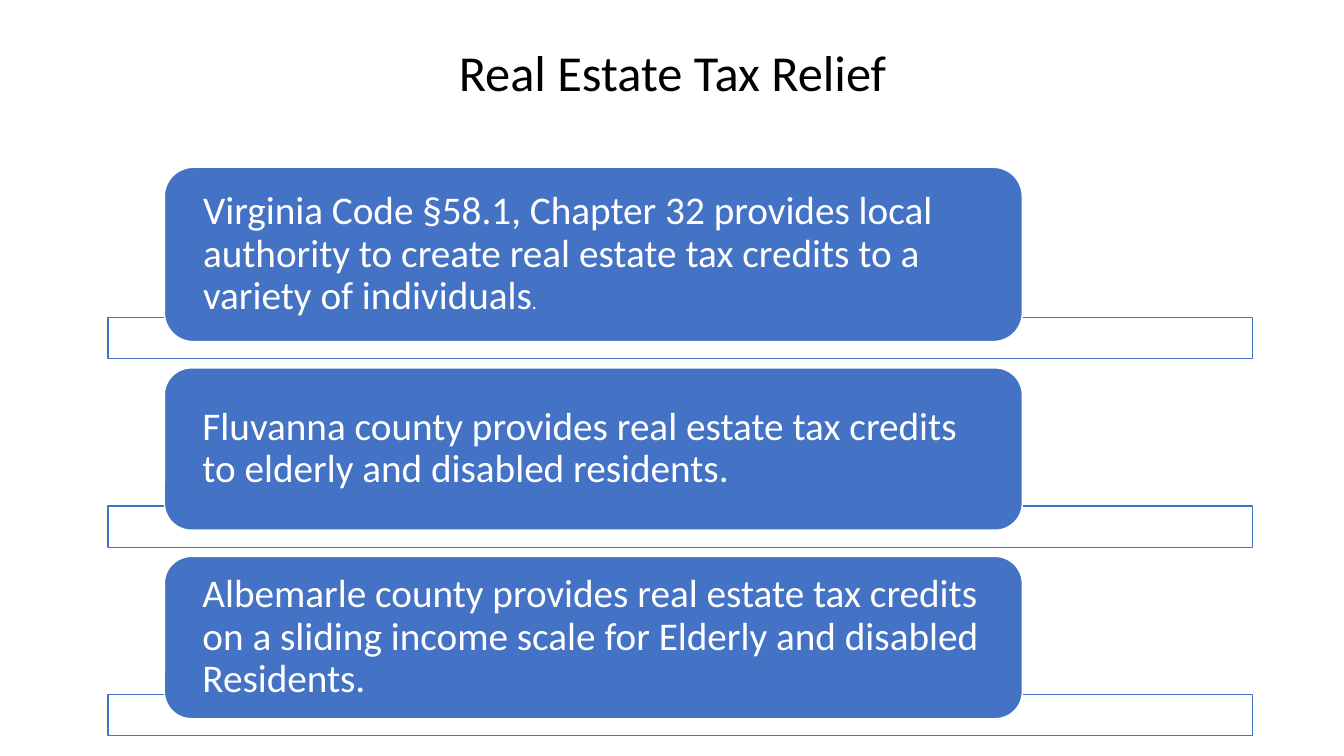
import pptx
import pptx.dml.color
import pptx.enum.shapes
import pptx.enum.text
import pptx.oxml.ns
import pptx.util
from lxml import etree

Inches = pptx.util.Inches
Pt = pptx.util.Pt
SHAPES = pptx.enum.shapes.MSO_SHAPE
ALIGN = pptx.enum.text.PP_ALIGN
MIDDLE = pptx.enum.text.MSO_ANCHOR.MIDDLE

TITLE = "Real Estate Tax Relief"
CARDS = [
    (1.73, [("Virginia Code §58.1, Chapter 32 provides local authority to create "
             "real estate tax credits to a variety of individuals", 28), (".", 14)]),
    (1.61, [("Fluvanna county provides real estate tax credits to elderly and "
             "disabled residents.", 28)]),
    (1.61, [("Albemarle county provides real estate tax credits on a sliding "
             "income scale for Elderly and disabled Residents.", 28)]),
]

FONT = "Calibri"
BLUE, WHITE, BLACK = "4472C4", "FFFFFF", "000000"
CARD_LEFT, CARD_WIDTH, FIRST_TOP, CARD_GAP = 1.63, 8.51, 1.66, 0.26
BAR_LEFT, BAR_WIDTH, BAR_HEIGHT, BAR_OVERLAP = 1.07, 11.35, 0.41, 0.24


def color(value):
    return pptx.dml.color.RGBColor.from_string(value)


def add_box(slide, kind, left, top, width, height, fill, line):
    shape = slide.shapes.add_shape(
        kind, Inches(left), Inches(top), Inches(width), Inches(height))
    shape.shadow.inherit = False
    shape.fill.solid()
    shape.fill.fore_color.rgb = color(fill)
    shape.line.color.rgb = color(line)
    shape.line.width = Pt(1)
    return shape


def set_opacity(shape, percent):
    fill_color = shape.fill._xPr.find(pptx.oxml.ns.qn("a:solidFill"))[0]
    alpha = etree.SubElement(fill_color, pptx.oxml.ns.qn("a:alpha"))
    alpha.set("val", str(percent * 1000))


def write_text(frame, runs, font_color, alignment):
    frame.word_wrap = True
    frame.vertical_anchor = MIDDLE
    paragraph = frame.paragraphs[0]
    paragraph.alignment = alignment
    paragraph.line_spacing = 0.9
    for text, size in runs:
        run = paragraph.add_run()
        run.text = text
        run.font.name = FONT
        run.font.size = Pt(size)
        run.font.color.rgb = color(font_color)


def add_card(slide, top, height, runs):
    bar = add_box(slide, SHAPES.RECTANGLE, BAR_LEFT, top + height - BAR_OVERLAP,
                  BAR_WIDTH, BAR_HEIGHT, WHITE, BLUE)
    set_opacity(bar, 90)
    card = add_box(slide, SHAPES.ROUNDED_RECTANGLE, CARD_LEFT, top,
                   CARD_WIDTH, height, BLUE, WHITE)
    frame = card.text_frame
    frame.margin_left = frame.margin_right = Inches(0.3)
    frame.margin_top = frame.margin_bottom = 0
    write_text(frame, runs, WHITE, ALIGN.LEFT)


def main():
    presentation = pptx.Presentation()
    presentation.slide_width = Inches(13.33)
    presentation.slide_height = Inches(7.5)
    slide = presentation.slides.add_slide(presentation.slide_layouts[5])

    title = slide.shapes.title
    title.left, title.top = Inches(0.92), Inches(0.02)
    title.width, title.height = Inches(11.5), Inches(1.45)
    write_text(title.text_frame, [(TITLE, 36)], BLACK, ALIGN.CENTER)

    top = FIRST_TOP
    for height, runs in CARDS:
        add_card(slide, top, height, runs)
        top += height + CARD_GAP

    presentation.save("out.pptx")


if __name__ == "__main__":
    main()
